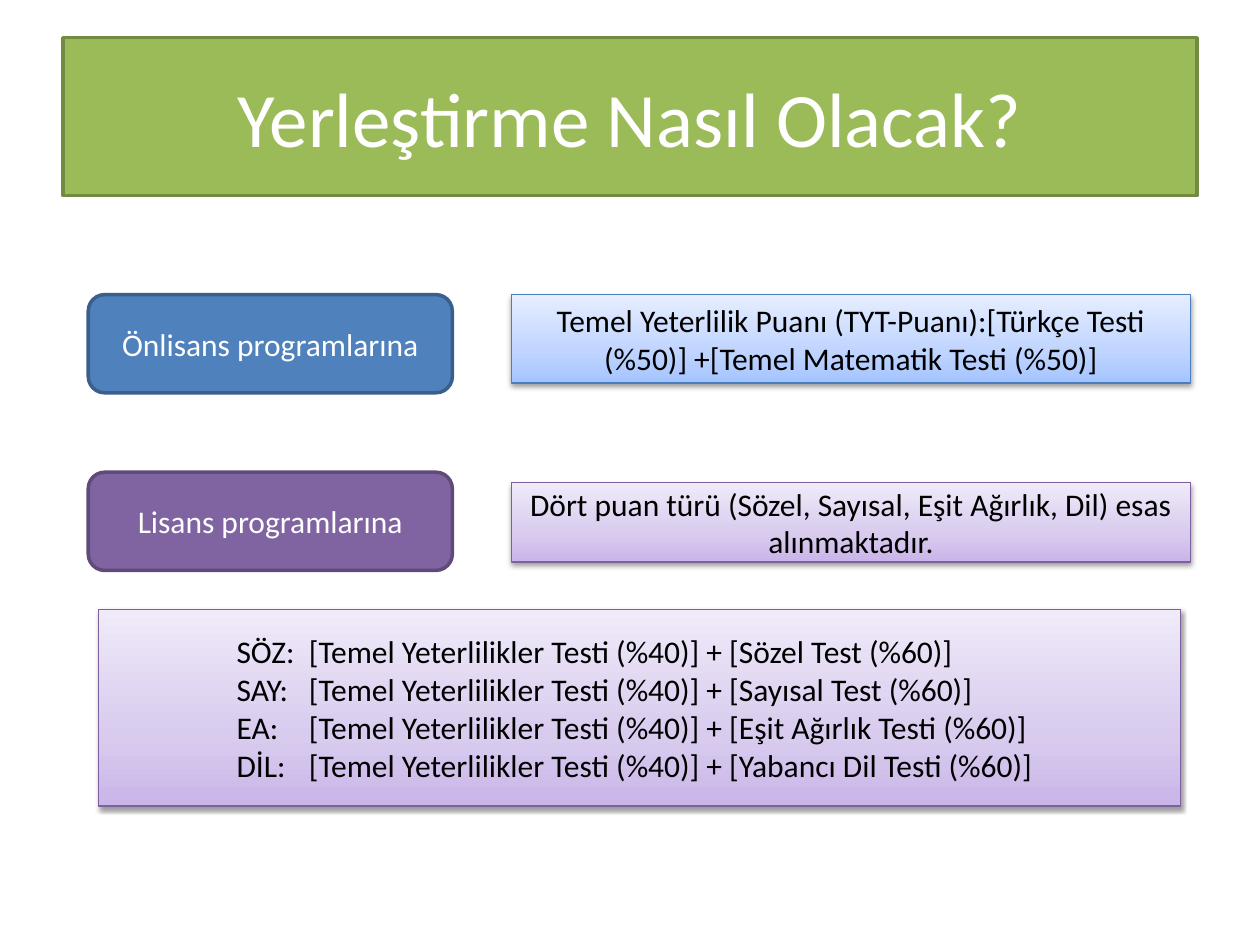
from pptx import Presentation
from pptx.dml.color import RGBColor as RGB
from pptx.enum.shapes import MSO_SHAPE as Kind
from pptx.enum.text import MSO_ANCHOR as Anchor, PP_ALIGN as Align
from pptx.oxml import parse_xml
from pptx.oxml.ns import nsdecls
from pptx.util import Cm, Pt

WHITE = RGB(0xFF, 0xFF, 0xFF)
BLACK = RGB(0x00, 0x00, 0x00)
GREEN = RGB(0x9B, 0xBB, 0x59)
MOSS = RGB(0x73, 0x8A, 0x42)
BLUE = RGB(0x4F, 0x81, 0xBD)
NAVY = RGB(0x3A, 0x5F, 0x8C)
AZURE = RGB(0x4B, 0x7E, 0xBC)
PURPLE = RGB(0x80, 0x64, 0xA2)
PLUM = RGB(0x5F, 0x4A, 0x78)
VIOLET = RGB(0x7D, 0x60, 0xA0)
SKY = (RGB(0xA4, 0xC4, 0xFF), RGB(0xBF, 0xD4, 0xFF), RGB(0xE6, 0xEE, 0xFF))
LILAC = (RGB(0xC9, 0xB5, 0xE8), RGB(0xD8, 0xCB, 0xEE), RGB(0xF0, 0xEA, 0xF9))

FONT = "Calibri"
LEFT, WIDE = 1.78, 7.34
RIGHT, SPAN = 10.31, 13.69

SCORES = (
    ("SÖZ:", "Sözel Test"),
    ("SAY:", "Sayısal Test"),
    ("EA:", "Eşit Ağırlık Testi"),
    ("DİL:", "Yabancı Dil Testi"),
)


def write(shape, lines, size, color, align=Align.CENTER):
    frame = shape.text_frame
    frame.word_wrap = True
    frame.vertical_anchor = Anchor.MIDDLE
    frame.text = "\n".join(lines)
    for para in frame.paragraphs:
        para.alignment = align
        para.font.name = FONT
        para.font.size = Pt(size)
        para.font.color.rgb = color


def paint(shape, fill, edge):
    shape.fill.solid()
    shape.fill.fore_color.rgb = fill
    shape.line.color.rgb = edge
    shape.line.width = Pt(2)


def shade(shape, tones, edge):
    stops = "".join(
        f'<a:gs pos="{pos}000"><a:srgbClr val="{tone}"/></a:gs>'
        for pos, tone in zip((0, 35, 100), tones)
    )
    grad = parse_xml(
        f'<a:gradFill {nsdecls("a")} rotWithShape="1"><a:gsLst>{stops}</a:gsLst>'
        '<a:lin ang="16200000" scaled="0"/></a:gradFill>'
    )
    shape.fill.background()
    props = shape._element.spPr
    props.replace(props.find("{*}noFill"), grad)
    shape.line.color.rgb = edge
    shape.line.width = Pt(0.75)
    props.find("{*}effectLst").append(parse_xml(
        f'<a:outerShdw {nsdecls("a")} blurRad="{Pt(3.1)}" dist="{Pt(1.6)}"'
        ' dir="5400000" rotWithShape="0"><a:srgbClr val="000000">'
        '<a:alpha val="38000"/></a:srgbClr></a:outerShdw>'
    ))


def add_shape(slide, kind, *box):
    shape = slide.shapes.add_shape(kind, *map(Cm, box))
    shape.shadow.inherit = False
    return shape


def add_label(slide, top, text, fill, edge):
    label = add_shape(slide, Kind.ROUNDED_RECTANGLE, LEFT, top, WIDE, 1.98)
    paint(label, fill, edge)
    write(label, [text], 18, WHITE)


def add_panel(slide, box, lines, tones, edge, align=Align.CENTER):
    panel = add_shape(slide, Kind.RECTANGLE, *box)
    shade(panel, tones, edge)
    write(panel, lines, 18, BLACK, align)
    return panel


def add_scores(slide):
    lines = [
        f"{code}\t[Temel Yeterlilikler Testi (%40)] + [{test} (%60)]"
        for code, test in SCORES
    ]
    box = (1.98, 12.29, 21.82, 3.96)
    panel = add_panel(slide, box, lines, LILAC, VIOLET, Align.LEFT)
    for para in panel.text_frame.paragraphs:
        para.level = 2
        props = para._p.get_or_add_pPr()
        props.set("marL", str(Cm(4)))
        props.set("indent", str(Cm(-1.46)))


def add_title(slide, text):
    title = slide.shapes.title
    title.left, title.top = Cm(1.27), Cm(0.76)
    title.width, title.height = Cm(22.86), Cm(3.18)
    paint(title, GREEN, MOSS)
    write(title, [text], 44, WHITE)


def main():
    deck = Presentation()
    deck.slide_width, deck.slide_height = Cm(25.4), Cm(19.05)
    slide = deck.slides.add_slide(deck.slide_layouts[5])
    add_title(slide, "Yerleştirme Nasıl Olacak?")
    add_label(slide, 5.94, "Önlisans programlarına", BLUE, NAVY)
    add_panel(
        slide, (RIGHT, 5.94, SPAN, 1.78),
        ["Temel Yeterlilik Puanı (TYT-Puanı):[Türkçe Testi (%50)] "
         "+[Temel Matematik Testi (%50)]"],
        SKY, AZURE,
    )
    add_label(slide, 9.52, "Lisans programlarına", PURPLE, PLUM)
    add_panel(
        slide, (RIGHT, 9.73, SPAN, 1.6),
        ["Dört puan türü (Sözel, Sayısal, Eşit Ağırlık, Dil) esas alınmaktadır."],
        LILAC, VIOLET,
    )
    add_scores(slide)
    deck.save("out.pptx")


if __name__ == "__main__":
    main()
